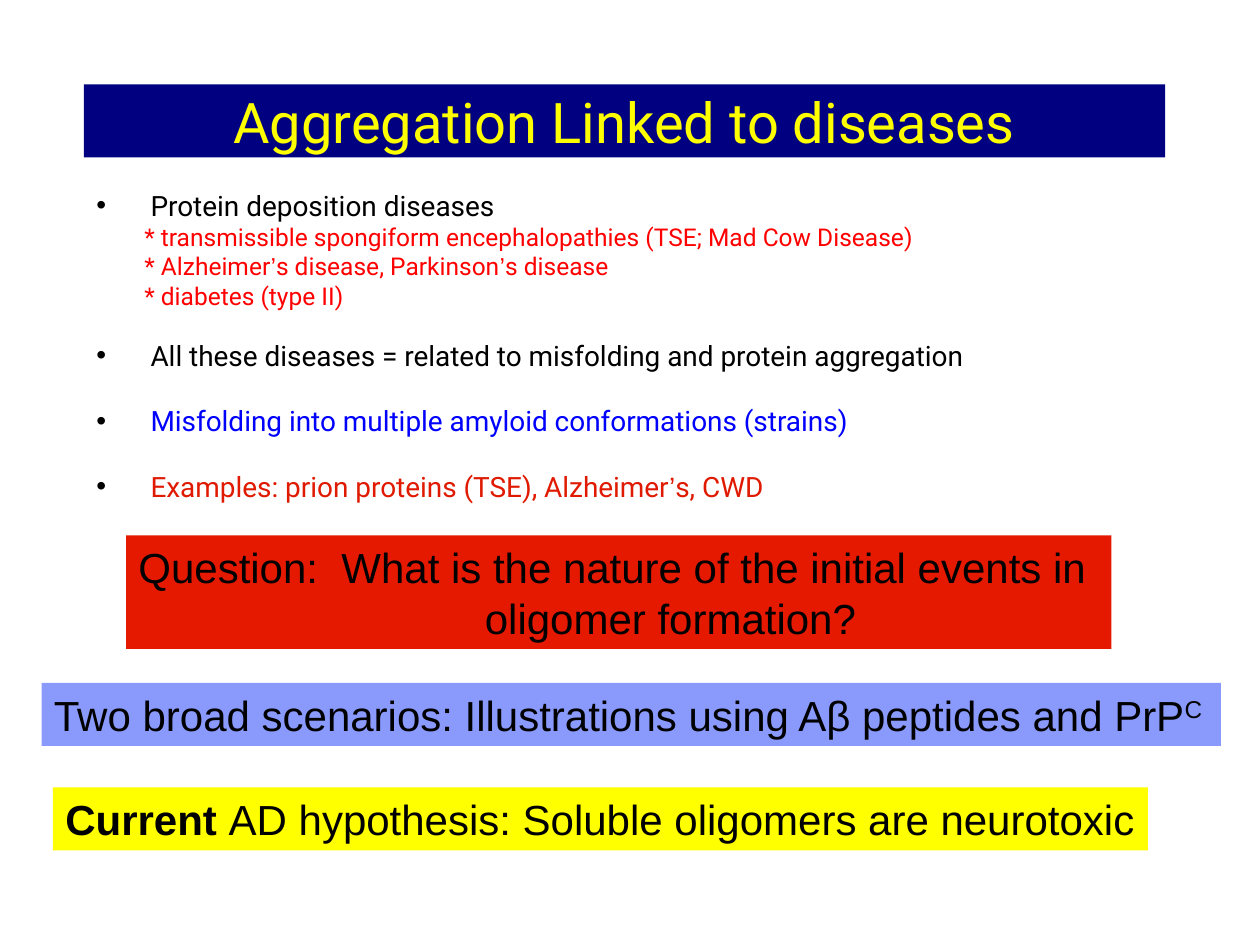
from lxml import etree
from pptx import Presentation
from pptx import util as u
from pptx.dml.color import RGBColor
from pptx.enum import shapes, text
from pptx.oxml.ns import qn

WIDE, HIGH = 10, 7.5


def paint(part, tone):
    """Give a fill or a font a hex colour."""
    if hasattr(part, "solid"):
        part.solid()
        part.fore_color.rgb = RGBColor.from_string(tone)
    else:
        part.color.rgb = RGBColor.from_string(tone)


def place(shape, left, top, width, height):
    """Set a shape's box in inches."""
    shape.left, shape.top = u.Inches(left), u.Inches(top)
    shape.width, shape.height = u.Inches(width), u.Inches(height)


def write(para, words, size=24, face="Arial", tone="000000", bold=False, lift=0):
    """Add one formatted run to a paragraph."""
    run = para.add_run()
    run.text = words
    run.font.size, run.font.name, run.font.bold = u.Pt(size), face, bold
    paint(run.font, tone)
    if lift:
        run._r.get_or_add_rPr().set("baseline", str(lift * 1000))


def indent(para, left, hang=0, mark=None):
    """Set a paragraph's indent and optional bullet."""
    props = para._p.get_or_add_pPr()
    props.set("marL", str(u.Inches(left)))
    props.set("indent", str(-u.Inches(hang)))
    if mark:
        tint = etree.SubElement(props, qn("a:buClr"))
        etree.SubElement(tint, qn("a:srgbClr")).set("val", "000000")
        etree.SubElement(props, qn("a:buFont")).set("typeface", "Arial")
        etree.SubElement(props, qn("a:buChar")).set("char", mark)


def lines(frame, count):
    """Return the given number of left-aligned paragraphs."""
    paras = [frame.paragraphs[0]] + [frame.add_paragraph() for _ in range(count - 1)]
    for para in paras:
        para.alignment = text.PP_ALIGN.LEFT
    return paras


def head(slide, words):
    """Format the title as a coloured bar."""
    title = slide.shapes.title
    place(title, WIDE / 15, 0.67, 8.58, 0.58)
    paint(title.fill, "000080")
    frame = title.text_frame
    frame.auto_size = text.MSO_AUTO_SIZE.NONE
    frame.vertical_anchor = text.MSO_ANCHOR.MIDDLE
    para = frame.paragraphs[0]
    para.alignment = text.PP_ALIGN.CENTER
    write(para, words, size=32, face="Roboto", tone="FFFF00")


def points(slide, items):
    """Add the list of bullets and starred sub-items."""
    box = slide.shapes.add_textbox(0, 0, 0, 0)
    place(box, WIDE / 15, HIGH / 5, WIDE * 13 / 15, HIGH * 0.4)
    frame = box.text_frame
    frame.word_wrap = True
    for para, (words, tone, gap) in zip(lines(frame, len(items)), items):
        star = words.startswith("*")
        para.space_before, para.line_spacing = u.Pt(gap), 0.8
        if star:
            indent(para, 0.38)
        else:
            indent(para, 0.43, 0.43, "•")
        size = 14 if star else 16
        for spot, piece in enumerate(words.split("’")):
            if spot:
                write(para, "’", size=size, tone=tone)
            write(para, piece, size=size, face="Roboto", tone=tone)


def band(slide, box, tone, rows, alpha=None):
    """Add a coloured bar and return its paragraphs."""
    bar = slide.shapes.add_shape(shapes.MSO_SHAPE.RECTANGLE, 0, 0, 0, 0)
    place(bar, *box)
    bar.shadow.inherit = False
    paint(bar.fill, tone)
    bar.line.fill.background()
    if alpha:
        color = bar._element.spPr.find(".//" + qn("a:srgbClr"))
        etree.SubElement(color, qn("a:alpha")).set("val", str(alpha * 1000))
    frame = bar.text_frame
    frame.word_wrap = True
    frame.margin_right = 0
    frame.vertical_anchor = text.MSO_ANCHOR.TOP
    return lines(frame, rows)


def main():
    """Build and save the slide."""
    deck = Presentation()
    deck.slide_width, deck.slide_height = u.Inches(WIDE), u.Inches(HIGH)
    slide = deck.slides.add_slide(deck.slide_layouts[5])
    head(slide, "Aggregation Linked to diseases")
    points(slide, [
        ("Protein deposition diseases", "000000", 0),
        ("* transmissible spongiform encephalopathies (TSE; Mad Cow Disease)", "FF0000", 3.3),
        ("* Alzheimer’s disease, Parkinson’s disease", "FF0000", 3.3),
        ("* diabetes (type II)", "FF0000", 3.3),
        ("All these diseases = related to misfolding and protein aggregation", "000000", 20),
        ("Misfolding into multiple amyloid conformations (strains)", "0000FF", 22.1),
        ("Examples: prion proteins (TSE), Alzheimer’s, CWD", "E01A00", 22.1),
    ])
    ask, rest = band(slide, (1, 4.25, 7.82, 0.9), "E41900", 2)
    write(ask, "Question:  What is the nature of the initial events in")
    indent(rest, 2.75)
    write(rest, "oligomer formation?")
    [pair] = band(slide, (0.33, 5.42, 9.36, 0.5), "0025F9", 1, alpha=46)
    write(pair, "Two broad scenarios: Illustrations using Aβ peptides and PrP")
    write(pair, "C", lift=30)
    [claim] = band(slide, (0.42, 6.25, 8.69, 0.5), "FFFF00", 1)
    write(claim, "Current ", bold=True)
    write(claim, "AD hypothesis: Soluble oligomers are neurotoxic")
    deck.save("out.pptx")


if __name__ == "__main__":
    main()
